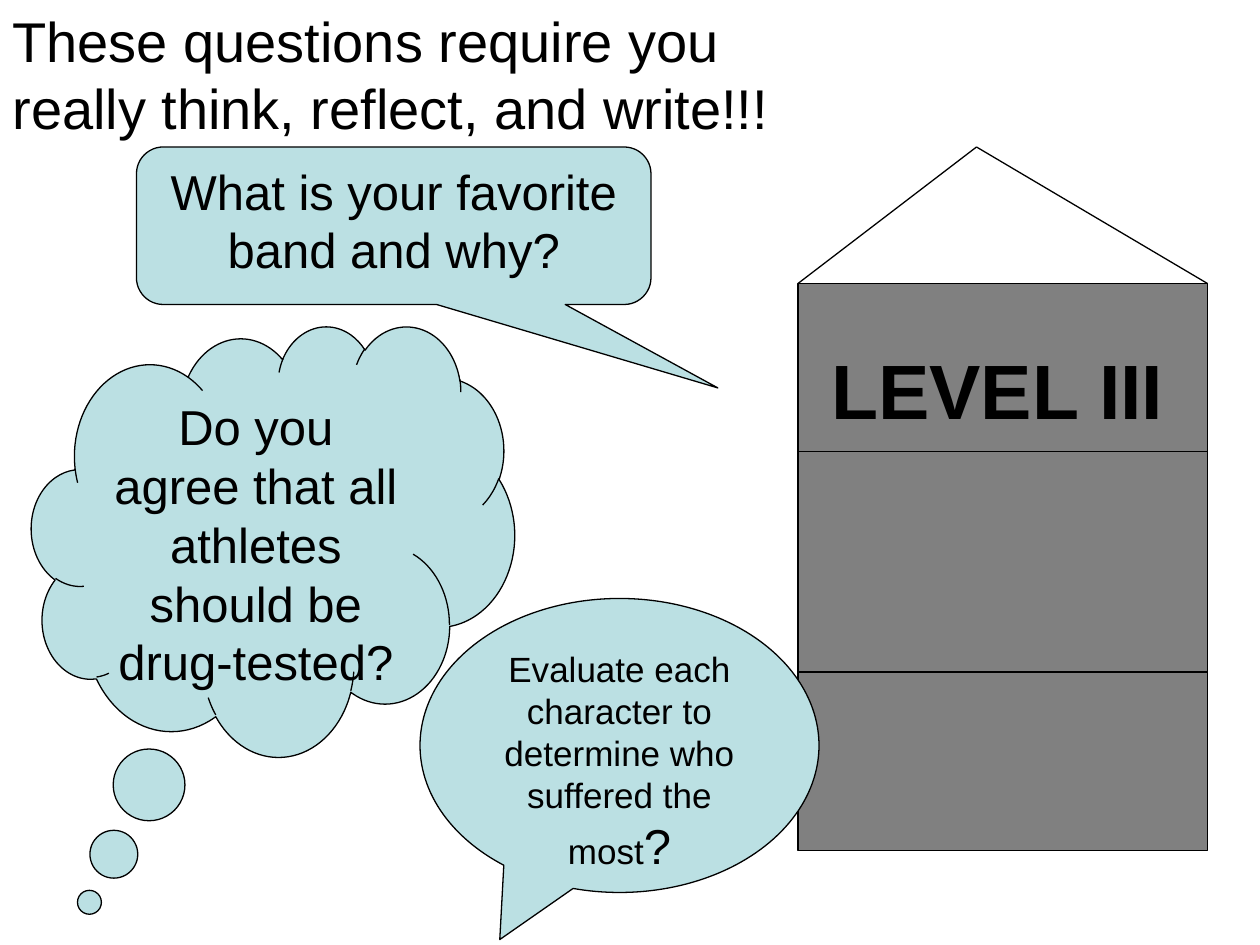
from lxml import etree
from pptx import Presentation
from pptx.dml.color import RGBColor
from pptx.enum import shapes, text
from pptx.oxml import ns
from pptx.util import Pt

HUES = {"ink": "000000", "wall": "808080", "pale": "BBE0E3"}
KINDS = shapes.MSO_SHAPE


def tone(name):
    """Return the named colour."""
    return RGBColor.from_string(HUES[name])


def write(frame, *runs, bold=False, align=text.PP_ALIGN.LEFT, before=0):
    """Fill a frame with one paragraph of (words, size) runs."""
    frame.word_wrap = True
    frame.vertical_anchor = text.MSO_ANCHOR.TOP
    para = frame.paragraphs[0]
    para.alignment = align
    if before:
        gap = etree.SubElement(para._p.get_or_add_pPr(), ns.qn("a:spcBef"))
        etree.SubElement(gap, ns.qn("a:spcPct"), val=str(before * 1000))
    for words, size in runs:
        run = para.add_run()
        run.text = words
        font = run.font
        font.name, font.size, font.bold = "Arial", Pt(size), bold
        font.color.rgb = tone("ink")


def label(slide, box, words, size, bold=False):
    """Add a text box that grows with its words."""
    frame = slide.shapes.add_textbox(*map(Pt, box)).text_frame
    write(frame, (words, size), bold=bold, before=50)
    frame.auto_size = text.MSO_AUTO_SIZE.SHAPE_TO_FIT_TEXT


def block(slide, kind, box, fill):
    """Add a filled shape with a thin outline."""
    shape = slide.shapes.add_shape(kind, *map(Pt, box))
    shape.shadow.inherit = False
    shape.fill.solid()
    shape.fill.fore_color.rgb = tone(fill)
    shape.line.color.rgb = tone("ink")
    shape.line.width = Pt(0.75)
    return shape


def rule(slide, *ends):
    """Add a thin straight line."""
    line = slide.shapes.add_connector(shapes.MSO_CONNECTOR.STRAIGHT, *map(Pt, ends))
    line.line.color.rgb = tone("ink")
    line.line.width = Pt(0.75)
    etree.SubElement(line._element.spPr, ns.qn("a:effectLst"))


def house(slide, box):
    """Draw the three-floor house with its roof and level name."""
    left, top, width, height = box
    right, peak = left + width, (left + 102, top - 78)
    block(slide, KINDS.RECTANGLE, box, "wall")
    for drop in (96, 222):
        rule(slide, left, top + drop, right, top + drop)
    label(slide, (left + 12, top + 30, 228, 60), "LEVEL III", 44, bold=True)
    rule(slide, left, top, *peak)
    rule(slide, *peak, right, top)


def bubble(slide, kind, box, tail, *runs):
    """Draw a callout with centred words."""
    shape = block(slide, kind, box, "pale")
    for spot, value in enumerate(tail):
        shape.adjustments[spot] = value
    write(shape.text_frame, *runs, align=text.PP_ALIGN.CENTER)


def main():
    """Build and save the slide."""
    deck = Presentation()
    deck.slide_width, deck.slide_height = Pt(720), Pt(540)
    slide = deck.slides.add_slide(deck.slide_layouts[6])
    house(slide, (456, 162, 234, 324))
    label(slide, (0, 0, 468, 199.5),
          "These questions require you really think, reflect, and write!!!", 32)
    bubble(slide, KINDS.ROUNDED_RECTANGULAR_CALLOUT, (78, 84, 294, 90),
           (0.63, 1.03, 0.17), ("What is your favorite band and why?", 28))
    bubble(slide, KINDS.CLOUD_CALLOUT, (18, 186, 276, 246), (-0.38, 0.84),
           ("Do you agree that all athletes should be drug-tested?", 28))
    bubble(slide, KINDS.OVAL_CALLOUT, (240, 342, 228, 168), (-0.3, 0.66),
           ("Evaluate each character to determine who suffered the most", 20), ("?", 28))
    deck.save("out.pptx")


if __name__ == "__main__":
    main()
